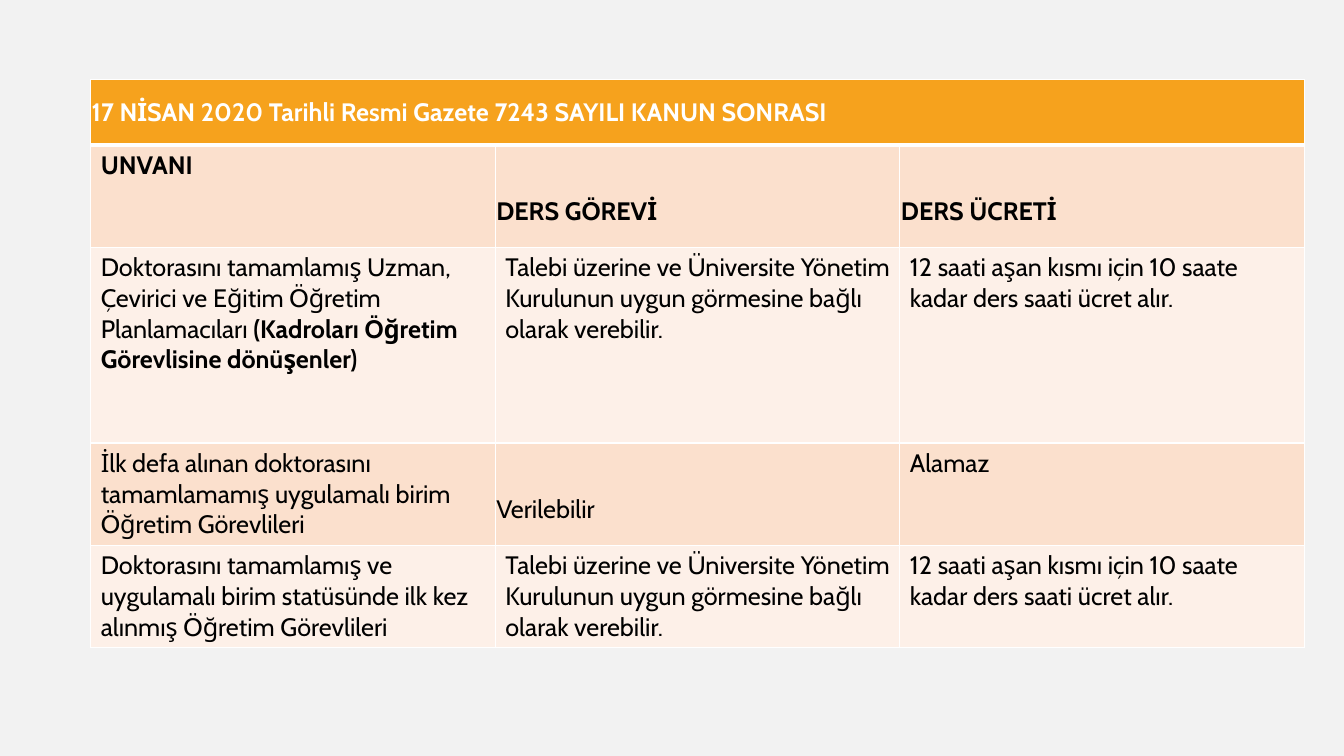
import pptx
import pptx.util
import pptx.dml.color
import pptx.enum.text
import pptx.oxml
import lxml.etree

Pt = pptx.util.Pt
RGB = pptx.dml.color.RGBColor.from_string
MIDDLE = pptx.enum.text.MSO_ANCHOR.MIDDLE

THEME = {
    "font": "Cabin", "size": 18, "background": "F2F2F2",
    "heading_fill": "F6A21D", "heading_text": "FFFFFF", "text": "000000",
    "bands": ["FBE0CD", "FDF0E8"], "border": "FFFFFF",
    "thin": 1, "thick": 3,
}
LINE_HEIGHT = 22

# Content: each cell is a list of (text, bold) runs
heading = "17 NİSAN 2020 Tarihli Resmi Gazete 7243 SAYILI KANUN SONRASI"
duty_on_request = [("Talebi üzerine ve Üniversite Yönetim Kurulunun uygun "
                    "görmesine bağlı olarak verebilir.", False)]
paid_hours = [("12 saati aşan kısmı için 10 saate kadar ders saati ücret alır.", False)]
rules = [
    [[(heading, True)], [], []],
    [[("UNVANI", True)], [("DERS GÖREVİ", True)], [("DERS ÜCRETİ", True)]],
    [[("Doktorasını tamamlamış Uzman, Çevirici ve Eğitim Öğretim Planlamacıları ", False),
      ("(Kadroları Öğretim Görevlisine dönüşenler)", True)],
     duty_on_request, paid_hours],
    [[("İlk defa alınan doktorasını tamamlamamış uygulamalı birim Öğretim Görevlileri", False)],
     [("Verilebilir", False)], [("Alamaz", False)]],
    [[("Doktorasını tamamlamış ve uygulamalı birim statüsünde ilk kez alınmış "
       "Öğretim Görevlileri", False)],
     duty_on_request, paid_hours],
]
lowered_cells = {(1, 1), (1, 2), (3, 1)}  # one line below the middle
row_heights = [46.8, 72.8, 139.8, 72.8, 72.8]
column_width = 289


def add_border(cell, side, width, position):
    line = pptx.oxml.parse_xml(
        '<a:%s xmlns:a="http://schemas.openxmlformats.org/drawingml/2006/main" w="%d">'
        '<a:solidFill><a:srgbClr val="%s"/></a:solidFill></a:%s>'
        % (side, Pt(width), THEME["border"], side))
    cell._tc.get_or_add_tcPr().insert(position, line)


# Slide
deck = pptx.Presentation()
deck.slide_width, deck.slide_height = Pt(960), Pt(540)
slide = deck.slides.add_slide(deck.slide_layouts[6])
slide.background.fill.solid()
slide.background.fill.fore_color.rgb = RGB(THEME["background"])

# Table grid
rules_table = slide.shapes.add_table(
    len(rules), 3, Pt(64.8), Pt(57), Pt(3 * column_width), Pt(sum(row_heights))).table
for column in rules_table.columns:
    column.width = Pt(column_width)
for row, height in zip(rules_table.rows, row_heights):
    row.height = Pt(height)
rules_table.cell(0, 0).merge(rules_table.cell(0, 2))

# Cells
for r, row_content in enumerate(rules):
    is_heading = r == 0
    for c, runs in enumerate(row_content):
        cell = rules_table.cell(r, c)
        cell.fill.solid()
        cell.fill.fore_color.rgb = RGB(
            THEME["heading_fill"] if is_heading else THEME["bands"][(r - 1) % 2])

        # The heading is set off by a thick rule
        for position, side in enumerate(["lnL", "lnR", "lnT", "lnB"]):
            is_thick = (r, side) in {(0, "lnB"), (1, "lnT")}
            add_border(cell, side, THEME["thick" if is_thick else "thin"], position)

        lowered = (r, c) in lowered_cells
        if is_heading or lowered:
            placement = {
                "vertical_anchor": MIDDLE,
                "margin_left": Pt(0.72), "margin_right": Pt(0.72),
                "margin_top": Pt(0.72 + LINE_HEIGHT * lowered),
                "margin_bottom": Pt(0.72),
            }
            for name, value in placement.items():
                setattr(cell, name, value)

        for text, bold in runs:
            run = cell.text_frame.paragraphs[0].add_run()
            run.text = text
            run_format = {"name": THEME["font"], "size": Pt(THEME["size"]), "bold": bold}
            for name, value in run_format.items():
                setattr(run.font, name, value)
            run.font.color.rgb = RGB(THEME["heading_text" if is_heading else "text"])

deck.save("out.pptx")
